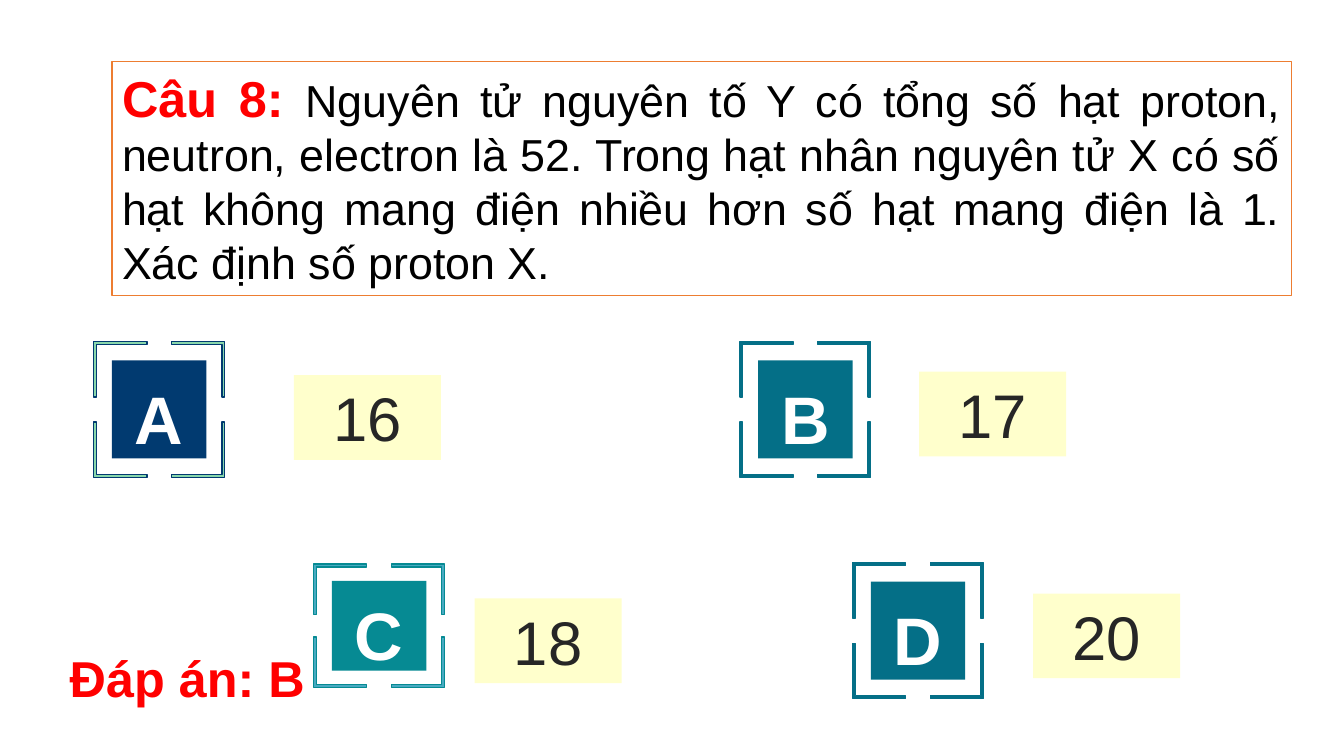
from dataclasses import dataclass

import pptx
import pptx.dml.color
import pptx.enum.shapes
import pptx.enum.text
import pptx.oxml
import pptx.oxml.ns
import pptx.presentation
import pptx.shapes.autoshape
import pptx.slide
import pptx.text.text
import pptx.util

EMU_PER_PX = 6350
FONT = "Arial"
RED = "FF0000"
FRAME_WIDTH = 187
TILE_WIDTH = 135
ARM_WIDTH = 76
THICKNESS = 4
ALIGN = pptx.enum.text.PP_ALIGN
ANCHOR = pptx.enum.text.MSO_ANCHOR


@dataclass(frozen=True)
class Option:
    """One lettered choice: its bracket frame, its tile and its answer."""

    letter: str
    answer: str
    frame_left: int
    frame_top: int
    frame_height: int
    tile_height: int
    arm_height: int
    answer_left: int
    answer_top: int
    colour: str
    frame_fill: str
    frame_opacity: int = 100


OPTIONS = [
    Option("A", "16", 134, 488, 194, 140, 79, 420, 536, "013A70", "59C78A", 71),
    Option("B", "17", 1057, 488, 194, 140, 79, 1313, 531, "046F87", "046F87"),
    Option("C", "18", 448, 806, 176, 128, 72, 678, 855, "068A93", "48AAC1"),
    Option("D", "20", 1218, 804, 194, 140, 79, 1476, 848, "046F87", "046F87"),
]


def px(length: int) -> pptx.util.Emu:
    """Turn px into EMU."""
    return pptx.util.Emu(length * EMU_PER_PX)


def colour_of(value: str) -> pptx.dml.color.RGBColor:
    """Turn a hex string into a colour."""
    return pptx.dml.color.RGBColor.from_string(value)


def style_font(font: pptx.text.text.Font, size: int, colour: str, bold: bool) -> None:
    """Set the typeface, size, colour and weight of a font."""
    font.name = FONT
    font.size = pptx.util.Pt(size)
    font.color.rgb = colour_of(colour)
    font.bold = bold


def write_centred(
    frame: pptx.text.text.TextFrame, text: str, size: int, colour: str, bold: bool
) -> pptx.text.text._Paragraph:
    """Write one centred paragraph."""
    paragraph = frame.paragraphs[0]
    paragraph.text = text
    paragraph.alignment = ALIGN.CENTER
    style_font(paragraph.font, size, colour, bold)
    return paragraph


def add_box(
    slide: pptx.slide.Slide, left: int, top: int, width: int, height: int, fill: str
) -> pptx.shapes.autoshape.Shape:
    """Add a plain filled rectangle."""
    box = slide.shapes.add_shape(
        pptx.enum.shapes.MSO_SHAPE.RECTANGLE, px(left), px(top), px(width), px(height)
    )
    box.shadow.inherit = False
    box.fill.solid()
    box.fill.fore_color.rgb = colour_of(fill)
    box.line.fill.background()
    return box


def add_tile(slide: pptx.slide.Slide, option: Option) -> None:
    """Add the lettered tile in the middle of its frame."""
    left = option.frame_left + (FRAME_WIDTH - TILE_WIDTH) // 2
    top = option.frame_top + (option.frame_height - option.tile_height) // 2
    tile = add_box(slide, left, top, TILE_WIDTH, option.tile_height, option.colour)
    tile.text_frame.vertical_anchor = ANCHOR.MIDDLE
    letter = write_centred(tile.text_frame, option.letter, 48, "FFFFFF", True)
    letter.line_spacing = 1.2
    letter.font._rPr.set("spc", "150")


def add_frame(slide: pptx.slide.Slide, option: Option) -> None:
    """Add the four corner brackets as one outline."""
    corner = [
        (0, 0),
        (ARM_WIDTH, 0),
        (ARM_WIDTH, THICKNESS),
        (THICKNESS, THICKNESS),
        (THICKNESS, option.arm_height),
        (0, option.arm_height),
    ]
    right = option.frame_left + FRAME_WIDTH
    bottom = option.frame_top + option.frame_height
    builder = slide.shapes.build_freeform(
        option.frame_left, option.frame_top, scale=EMU_PER_PX
    )
    for x, x_way in ((option.frame_left, 1), (right, -1)):
        for y, y_way in ((option.frame_top, 1), (bottom, -1)):
            points = [(x + x_way * dx, y + y_way * dy) for dx, dy in corner]
            builder.move_to(*points[0])
            builder.add_line_segments(points[1:], close=True)
    frame = builder.convert_to_shape()
    frame.shadow.inherit = False
    frame.fill.solid()
    frame.fill.fore_color.rgb = colour_of(option.frame_fill)
    frame.line.color.rgb = colour_of(option.colour)
    frame.line.width = pptx.util.Pt(1)
    if option.frame_opacity < 100:
        solid = frame.element.spPr.find(pptx.oxml.ns.qn("a:solidFill"))
        alpha = pptx.oxml.parse_xml(
            f'<a:alpha {pptx.oxml.ns.nsdecls("a")} val="{option.frame_opacity * 1000}"/>'
        )
        solid[0].append(alpha)


def add_answer(slide: pptx.slide.Slide, option: Option) -> None:
    """Add the answer box of an option."""
    answer = add_box(slide, option.answer_left, option.answer_top, 210, 121, "FFFFCC")
    answer.text_frame.vertical_anchor = ANCHOR.TOP
    write_centred(answer.text_frame, option.answer, 44, "262626", False)


def fill_question(slide: pptx.slide.Slide) -> None:
    """Place the question in the title placeholder."""
    question = slide.shapes.title
    question.left, question.top = px(160), px(88)
    question.width, question.height = px(1685), px(334)
    question.fill.solid()
    question.fill.fore_color.rgb = colour_of("FFFFFF")
    question.line.color.rgb = colour_of("ED7D31")
    question.line.width = pptx.util.Pt(1)
    frame = question.text_frame
    frame.word_wrap = True
    frame.auto_size = pptx.enum.text.MSO_AUTO_SIZE.NONE
    frame.vertical_anchor = ANCHOR.TOP
    paragraph = frame.paragraphs[0]
    paragraph.alignment = ALIGN.JUSTIFY
    number = paragraph.add_run()
    number.text = "Câu 8: "
    style_font(number.font, 36, RED, True)
    wording = paragraph.add_run()
    wording.text = (
        "Nguyên tử nguyên tố Y có tổng số hạt proton, neutron, electron là 52. "
        "Trong hạt nhân nguyên tử X có số hạt không mang điện nhiều hơn số hạt "
        "mang điện là 1. Xác định số proton X."
    )
    style_font(wording.font, 32, "000000", False)


def add_solution(slide: pptx.slide.Slide) -> None:
    """Add the line that names the right option."""
    solution = slide.shapes.add_textbox(px(70), px(924), px(395), px(88))
    frame = solution.text_frame
    frame.word_wrap = True
    frame.margin_left = frame.margin_right = 0
    frame.margin_top = frame.margin_bottom = 0
    write_centred(frame, "Đáp án: B", 36, RED, True)


def main() -> None:
    """Build and save the quiz slide."""
    quiz = pptx.Presentation()
    quiz.slide_width, quiz.slide_height = px(1920), px(1080)
    slide = quiz.slides.add_slide(quiz.slide_layouts.get_by_name("Title Only"))
    fill_question(slide)
    for option in OPTIONS:
        add_tile(slide, option)
        add_frame(slide, option)
        add_answer(slide, option)
    add_solution(slide)
    quiz.save("out.pptx")


if __name__ == "__main__":
    main()
